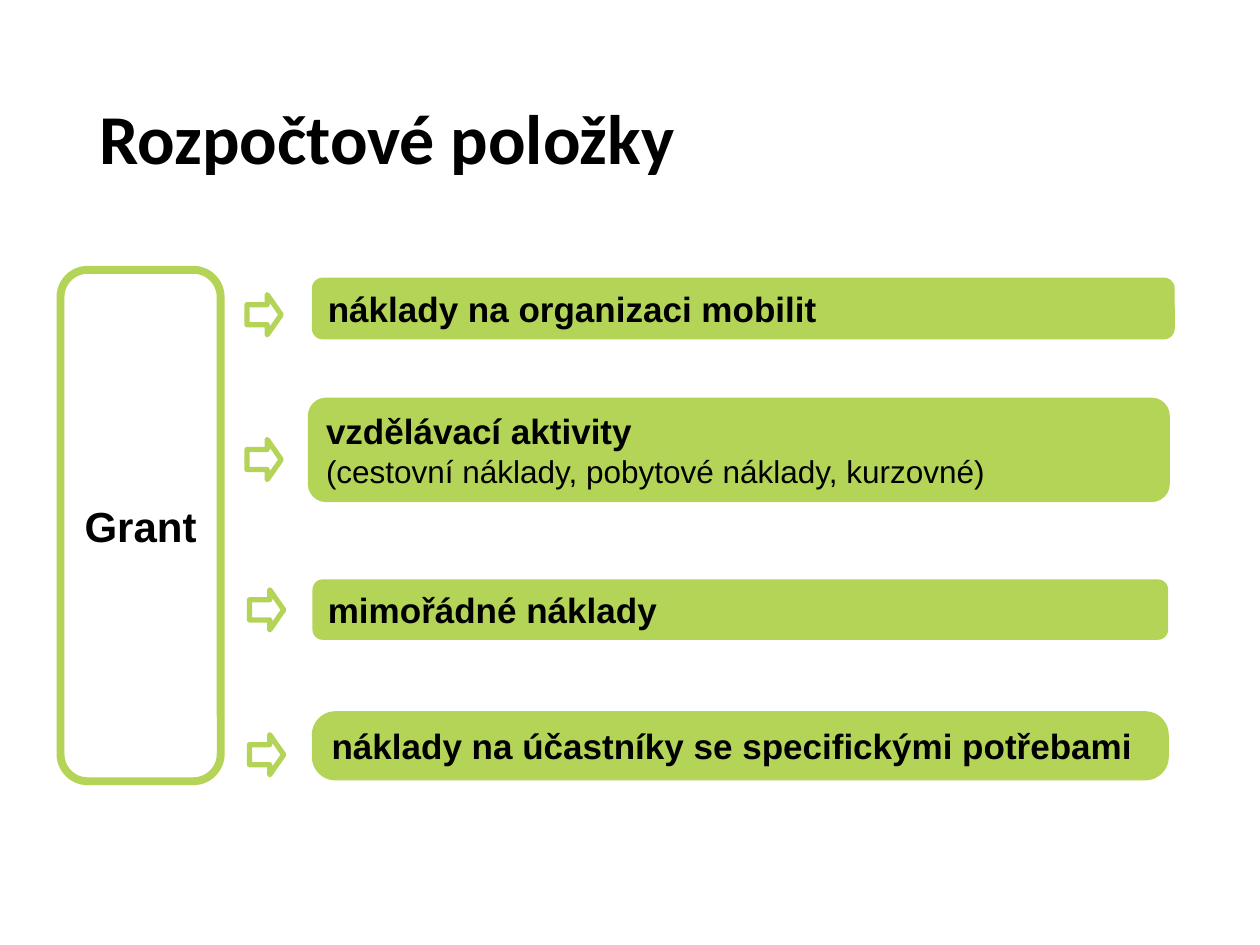
import pptx
import pptx.dml.color
import pptx.enum.shapes
import pptx.enum.text
import pptx.util
from pptx.util import Cm

SHAPE = pptx.enum.shapes.MSO_SHAPE
ANCHOR = pptx.enum.text.MSO_ANCHOR
ALIGN = pptx.enum.text.PP_ALIGN
FIT = pptx.enum.text.MSO_AUTO_SIZE


def color(value):
    return pptx.dml.color.RGBColor.from_string(value)


class Deck:
    green = "B4D457"
    black = "000000"
    font = "Arial"
    title_font = "Calibri"

    def __init__(self, prs):
        self.s = prs.slides.add_slide(prs.slide_layouts[5])

    def run(self, p, text, size, bold=True, font=None):
        r = p.add_run()
        r.text = text
        r.font.name = font or self.font
        r.font.size = pptx.util.Pt(size)
        r.font.bold = bold
        r.font.color.rgb = color(self.black)

    def title(self, text, left, top, width, height):
        sp = self.s.shapes.title
        sp.left, sp.top, sp.width, sp.height = Cm(left), Cm(top), Cm(width), Cm(height)
        tf = sp.text_frame
        tf.auto_size = FIT.NONE
        tf.vertical_anchor = ANCHOR.MIDDLE
        p = tf.paragraphs[0]
        p.alignment = ALIGN.LEFT
        p.line_spacing = 0.9
        self.run(p, text, 40, font=self.title_font)

    def shape(self, kind, left, top, width, height, adjustments, line=None, filled=False):
        sp = self.s.shapes.add_shape(kind, Cm(left), Cm(top), Cm(width), Cm(height))
        sp.shadow.inherit = False
        for i, value in enumerate(adjustments):
            sp.adjustments[i] = value
        if filled:
            sp.fill.solid()
            sp.fill.fore_color.rgb = color(self.green)
        else:
            sp.fill.background()
        if line:
            sp.line.color.rgb = color(self.green)
            sp.line.width = pptx.util.Pt(line)
        else:
            sp.line.fill.background()
        return sp

    def frame(self, text, left, top, width, height):
        sp = self.shape(SHAPE.ROUNDED_RECTANGLE, left, top, width, height, [0.17], 4.5)
        tf = sp.text_frame
        tf.word_wrap = False
        tf.vertical_anchor = ANCHOR.MIDDLE
        p = tf.paragraphs[0]
        p.alignment = ALIGN.CENTER
        self.run(p, text, 24)

    def bar(self, text, detail, left, top, width, height, corner, line):
        sp = self.shape(SHAPE.ROUNDED_RECTANGLE, left, top, width, height, [corner], line, True)
        tf = sp.text_frame
        tf.word_wrap = True
        tf.auto_size = FIT.SHAPE_TO_FIT_TEXT
        tf.vertical_anchor = ANCHOR.TOP
        p = tf.paragraphs[0]
        p.alignment = ALIGN.LEFT
        self.run(p, text, 20)
        if detail:
            p.add_line_break()
            self.run(p, detail, 18, bold=False)

    def arrow(self, left, top):
        self.shape(SHAPE.RIGHT_ARROW, left, top, 0.69, 0.81, [0.5, 0.41], 3)


def main():
    prs = pptx.Presentation()
    prs.slide_width, prs.slide_height = Cm(25.4), Cm(19.05)
    deck = Deck(prs)
    deck.title("Rozpočtové položky", 1.75, 1.02, 21.89, 3.68)
    deck.frame("Grant", 1.22, 5.44, 3.23, 10.31)

    bars = [
        ("náklady na organizaci mobilit", None, 6.3, 5.61, 17.37, 1.22, 0.17, 0.75),
        ("vzdělávací aktivity", "(cestovní náklady, pobytové náklady, kurzovné)",
         6.22, 8.03, 17.35, 2.08, 0.17, 0.75),
        ("mimořádné náklady", None, 6.3, 11.68, 17.25, 1.22, 0.17, None),
        ("náklady na účastníky se specifickými potřebami", None,
         6.3, 14.35, 17.25, 1.37, 0.34, 0.75),
    ]
    arrows = [(4.98, 5.94), (4.98, 8.86), (5.03, 11.89), (5.03, 14.81)]
    for bar, arrow in zip(bars, arrows):
        deck.bar(*bar)
        deck.arrow(*arrow)
    prs.save("out.pptx")


if __name__ == "__main__":
    main()
